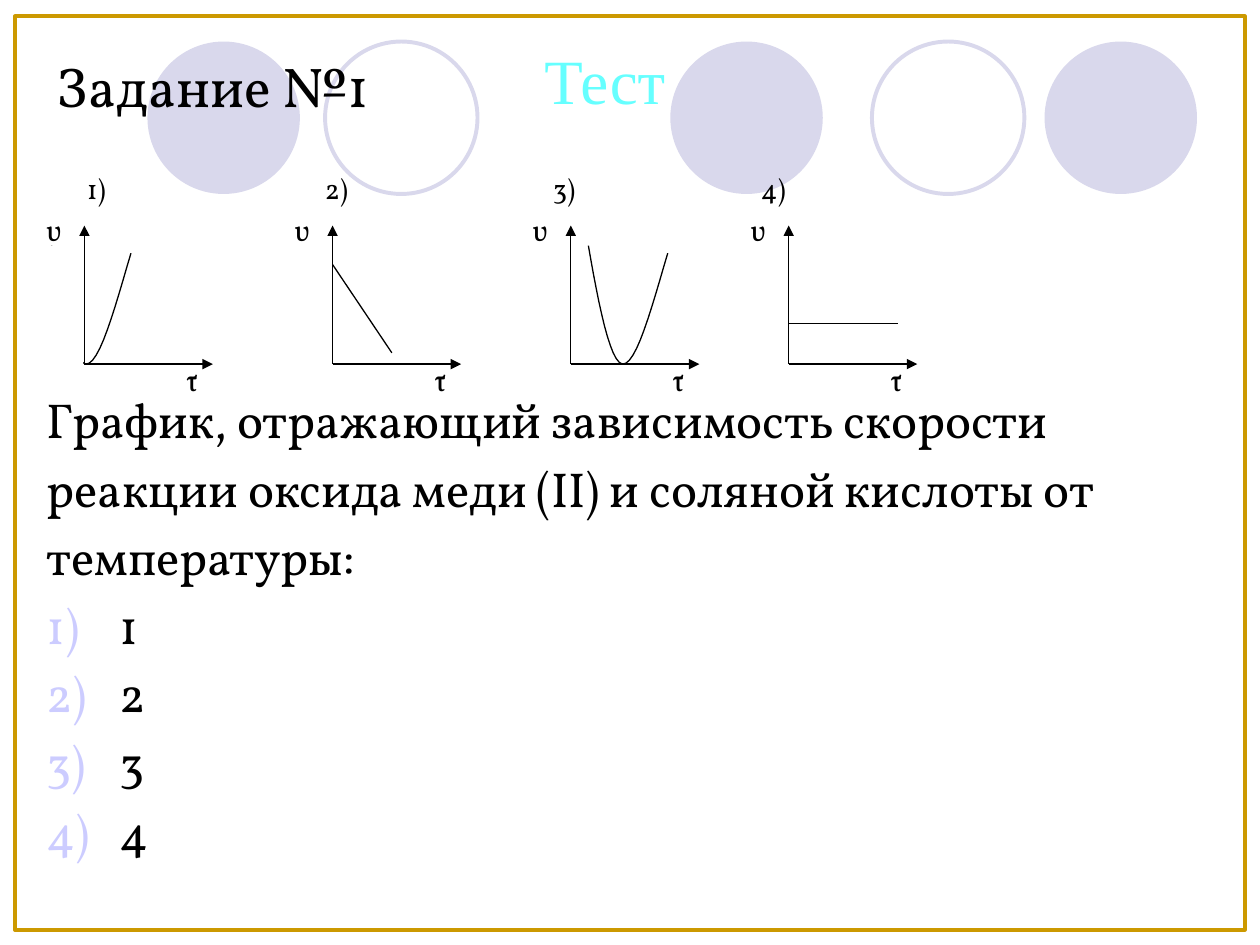
from lxml import etree
from pptx import Presentation
from pptx import util as u
from pptx.dml.color import RGBColor
from pptx.enum import shapes, text
from pptx.oxml.ns import qn

INK, LILAC, GOLD, BULLET = "000000", "D9D8EC", "CC9900", "CCCCFF"
FONT = "Vollkorn"
GRAPH_LEFTS = [0.27, 2.24, 4.13, 5.86]
NUMBER_LEFTS = [0.59, 2.48, 4.29, 5.94]
PARABOLA = [(0.14, 1.95), (0.22, 2.41), (0.31, 2.87), (0.41, 2.89),
            (0.52, 2.9), (0.64, 2.45), (0.77, 2.01)]


def color(value):
    """Turn a hex string into a colour."""
    return RGBColor.from_string(value)


def inches(*values):
    """Turn numbers into lengths."""
    return [u.Inches(value) for value in values]


def add_element(parent, tag, **attributes):
    """Append a drawing element to its parent."""
    return etree.SubElement(parent, qn(tag), **attributes)


def style_font(para, size, fill=INK, name=FONT):
    """Set the font of a paragraph."""
    para.font.size, para.font.name = u.Pt(size), name
    para.font.color.rgb = color(fill)


def style_shape(shape, fill=None, line=None, width=2.25):
    """Set fill and line of a shape and drop its shadow."""
    shape.shadow.inherit = False
    if fill:
        shape.fill.solid()
        shape.fill.fore_color.rgb = color(fill)
    else:
        shape.fill.background()
    if line:
        shape.line.color.rgb = color(line)
        shape.line.width = u.Pt(width)
    else:
        shape.line.fill.background()


def add_label(parts, words, box, size):
    """Place a small text box and return it."""
    label = parts.add_textbox(*inches(*box))
    label.text_frame.word_wrap = True
    para = label.text_frame.paragraphs[0]
    para.text = words
    style_font(para, size)
    return label


def add_line(parts, start, end, arrow=False):
    """Draw a thin straight line, with an arrowhead if asked."""
    line = parts.add_connector(shapes.MSO_CONNECTOR.STRAIGHT, *inches(*start, *end))
    line.line.color.rgb = color(INK)
    line.line.width = u.Pt(0.75)
    if arrow:
        add_element(line.line._get_or_add_ln(), "a:tailEnd", type="triangle")
    add_element(line._element.spPr, "a:effectLst")


def add_parabola(parts, left):
    """Draw the parabola as a smooth run of short segments."""
    points = []
    for first in (0, 3):
        knots = PARABOLA[first:first + 4]
        for step in range(13):
            t = step / 12
            weights = ((1 - t) ** 3, 3 * t * (1 - t) ** 2, 3 * t * t * (1 - t), t ** 3)
            x, y = (sum(w * knot[axis] for w, knot in zip(weights, knots)) for axis in (0, 1))
            points.append(tuple(inches(left + x, y)))
    builder = parts.build_freeform(*points[0])
    builder.add_line_segments(points[1:], close=False)
    style_shape(builder.convert_to_shape(), line=INK, width=0.75)


def add_graph(page, left, kind):
    """Draw one speed graph whose box starts at the given left."""
    parts = page.shapes.add_group_shape().shapes
    origin = left + 0.4
    add_line(parts, (origin, 2.89), (origin, 1.79), arrow=True)
    add_line(parts, (origin, 2.89), (origin + 1.02, 2.89), arrow=True)
    add_label(parts, "υ", (left, 1.62, 0.24, 0.4), 18)
    add_label(parts, "τ", (left + 1.11, 2.81, 0.39, 0.4), 18)
    if kind == "falling":
        add_line(parts, (origin, 2.1), (origin + 0.47, 2.8))
    elif kind == "constant":
        add_line(parts, (origin, 2.57), (origin + 0.87, 2.57))
    elif kind == "parabola":
        add_parabola(parts, origin)
    else:
        add_parabola(parts, origin - 0.4)
        cover = parts.add_shape(shapes.MSO_SHAPE.RECTANGLE, *inches(left, 1.95, 0.39, 1.02))
        style_shape(cover, fill="FFFFFF")


def add_backdrop(page):
    """Draw the row of circles and the gold frame."""
    circles = [(5.32, True), (8.29, True), (1.17, True), (6.92, False), (2.58, False)]
    for left, filled in circles:
        circle = page.shapes.add_shape(shapes.MSO_SHAPE.OVAL, *inches(left, 0.33, 1.21, 1.21))
        style_shape(circle, fill=LILAC if filled else None, line=None if filled else LILAC)
    frame = page.shapes.add_shape(shapes.MSO_SHAPE.RECTANGLE, *inches(0.12, 0.13, 9.76, 7.25))
    style_shape(frame, line=GOLD)


def place_placeholder(holder, box):
    """Move a placeholder to its box, in front of the backdrop."""
    holder.left, holder.top, holder.width, holder.height = inches(*box)
    holder._element.getparent().append(holder._element)
    frame = holder.text_frame
    frame.word_wrap = True
    frame.auto_size = text.MSO_AUTO_SIZE.NONE
    frame.vertical_anchor = text.MSO_ANCHOR.TOP
    return frame


def add_question(page, box):
    """Fill the body with the question and its numbered answers."""
    frame = place_placeholder(page.placeholders[1], box)
    question = ["График, отражающий зависимость скорости",
                "реакции оксида меди (II) и соляной кислоты от", "температуры:"]
    answers = ["1", "2", "3", "4"]
    frame.text = "\n".join(question + answers)
    for index, para in enumerate(frame.paragraphs):
        para.space_before = u.Pt(5.6 if index else 0)
        props = para._p.get_or_add_pPr()
        props.set("marL", str(u.Inches(0.58)))
        props.set("indent", str(u.Inches(-0.58)))
        if index < len(question):
            add_element(props, "a:buNone")
        else:
            add_element(add_element(props, "a:buClr"), "a:srgbClr", val=BULLET)
            add_element(props, "a:buAutoNum", type="arabicParenR")
        style_font(para, 28)


def add_heading(page):
    """Place the task title and the outlined word beside it."""
    para = place_placeholder(page.shapes.title, (0.35, 0.36, 3.23, 0.63)).paragraphs[0]
    para.text = "Задание №1"
    para.alignment = text.PP_ALIGN.LEFT
    style_font(para, 32)
    frame = add_label(page.shapes, "Тест", (4.29, 0.28, 1.02, 0.63), 36).text_frame
    frame.word_wrap = False
    frame.margin_left = frame.margin_right = 0
    para = frame.paragraphs[0]
    para.alignment = text.PP_ALIGN.CENTER
    style_font(para, 36, "66FFFF", "Times New Roman")
    outline = add_element(para.runs[0]._r.get_or_add_rPr(), "a:ln", w=str(u.Pt(0.75)))
    add_element(add_element(outline, "a:solidFill"), "a:srgbClr", val="6767FF")


def main():
    """Build the test slide."""
    deck = Presentation()
    deck.slide_width, deck.slide_height = inches(10, 7.5)
    page = deck.slides.add_slide(deck.slide_layouts[1])
    add_backdrop(page)
    add_question(page, (0.27, 3.04, 9.53, 3.03))
    add_heading(page)
    for left, kind in zip(GRAPH_LEFTS, ["rising", "falling", "parabola", "constant"]):
        add_graph(page, left, kind)
    for number, left in enumerate(NUMBER_LEFTS, 1):
        add_label(page.shapes, f"{number})", (left, 1.31, 0.55, 0.37), 16)
    deck.save("out.pptx")


if __name__ == "__main__":
    main()
